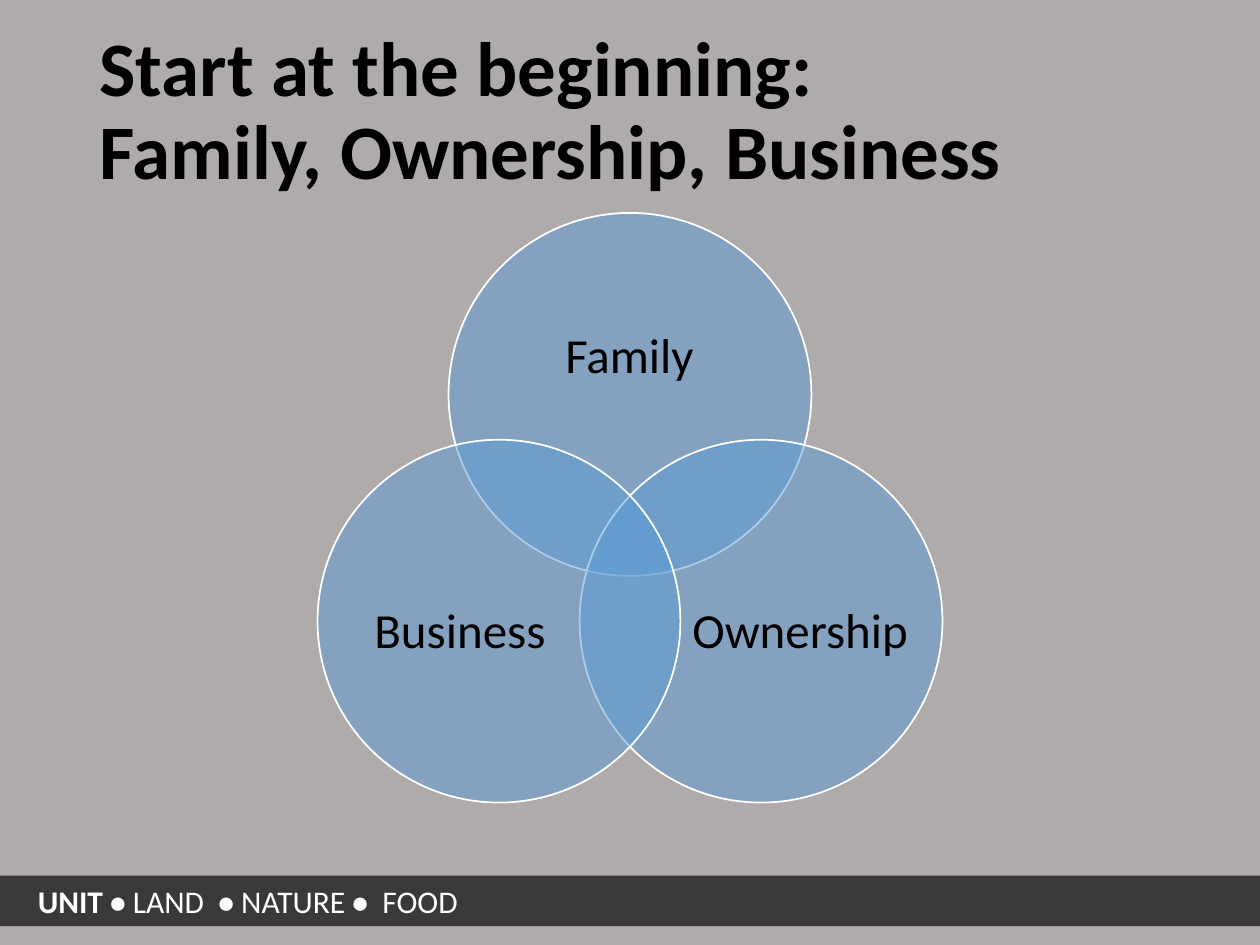
from dataclasses import dataclass

from lxml import etree
from pptx import Presentation
from pptx.dml.color import RGBColor
from pptx.enum.shapes import MSO_SHAPE
from pptx.enum.text import MSO_ANCHOR, MSO_AUTO_SIZE, PP_ALIGN
from pptx.oxml.ns import qn
from pptx.util import Inches, Pt

RECTANGLE, OVAL = MSO_SHAPE.RECTANGLE, MSO_SHAPE.OVAL
MIDDLE = MSO_ANCHOR.MIDDLE
LEFT, CENTER = PP_ALIGN.LEFT, PP_ALIGN.CENTER
NO_AUTOFIT = MSO_AUTO_SIZE.NONE
TITLE_ONLY = 5


@dataclass(frozen=True)
class Theme:
    font: str = "Calibri"
    background: RGBColor = RGBColor(0xAF, 0xAB, 0xAB)
    band: RGBColor = RGBColor(0x3B, 0x38, 0x38)
    circle: RGBColor = RGBColor(0x5B, 0x9B, 0xD5)
    light: RGBColor = RGBColor(0xFF, 0xFF, 0xFF)
    dark: RGBColor = RGBColor(0, 0, 0)
    circle_opacity: int = 50
    title_size: int = 44
    label_size: int = 28
    footer_size: int = 18


class SlideBuilder:
    def __init__(self, slide, theme):
        self.slide = slide
        self.theme = theme
        slide.background.fill.solid()
        slide.background.fill.fore_color.rgb = theme.background

    def style_frame(self, frame, margins):
        frame.word_wrap = True
        frame.auto_size = NO_AUTOFIT
        frame.vertical_anchor = MIDDLE
        (frame.margin_left, frame.margin_top,
         frame.margin_right, frame.margin_bottom) = map(Inches, margins)

    def style_paragraph(self, paragraph, size, color, align, bold=None):
        paragraph.alignment = align
        paragraph.font.name = self.theme.font
        paragraph.font.size = Pt(size)
        paragraph.font.color.rgb = color
        paragraph.font.bold = bold

    def title(self, text, box):
        title = self.slide.shapes.title
        title.left, title.top, title.width, title.height = map(Inches, box)
        self.style_frame(title.text_frame, (0.1, 0.05, 0.1, 0.05))
        paragraph = title.text_frame.paragraphs[0]
        paragraph.text = text
        paragraph.line_spacing = 0.9
        self.style_paragraph(paragraph, self.theme.title_size,
                             self.theme.dark, LEFT, bold=True)

    def footer(self, parts, box):
        band = self.slide.shapes.add_shape(RECTANGLE, *map(Inches, box))
        band.shadow.inherit = False
        band.fill.solid()
        band.fill.fore_color.rgb = self.theme.band
        band.line.fill.background()
        self.style_frame(band.text_frame, (0.3, 0.04, 0.07, 0.04))
        paragraph = band.text_frame.paragraphs[0]
        self.style_paragraph(paragraph, self.theme.footer_size,
                             self.theme.light, LEFT)
        for text, bold in parts:
            run = paragraph.add_run()
            run.text = text
            run.font.bold = bold

    def circle(self, group, center_x, center_y, diameter):
        radius = diameter / 2
        circle = group.shapes.add_shape(
            OVAL, Inches(center_x - radius), Inches(center_y - radius),
            Inches(diameter), Inches(diameter))
        circle.shadow.inherit = False
        circle.fill.solid()
        circle.fill.fore_color.rgb = self.theme.circle
        circle.line.color.rgb = self.theme.light
        circle.line.width = Pt(1)
        # Transparency of the fill
        color = circle.fill._xPr.find(qn("a:solidFill"))[0]
        etree.SubElement(color, qn("a:alpha"),
                         val=str(self.theme.circle_opacity * 1000))

    def label(self, group, text, box):
        label = group.shapes.add_textbox(*map(Inches, box))
        self.style_frame(label.text_frame, (0, 0, 0, 0))
        paragraph = label.text_frame.paragraphs[0]
        paragraph.text = text
        paragraph.line_spacing = 0.9
        self.style_paragraph(paragraph, self.theme.label_size,
                             self.theme.dark, CENTER)

    def venn(self, sets, diameter):
        group = self.slide.shapes.add_group_shape()
        for text, center, label_box in sets:
            self.circle(group, *center, diameter)
            self.label(group, text, label_box)


def main():
    presentation = Presentation()
    presentation.slide_width, presentation.slide_height = Inches(10), Inches(7.5)
    slide = presentation.slides.add_slide(presentation.slide_layouts[TITLE_ONLY])
    builder = SlideBuilder(slide, Theme())

    # Footer band
    builder.footer([("UNIT • ", True), ("LAND", False), ("  • ", True),
                    ("NATURE", False), (" •  ", True), ("FOOD", False)],
                   (0, 6.95, 10, 0.4))

    # Title
    builder.title("Start at the beginning: \vFamily, Ownership, Business",
                  (0.69, 0.4, 8.62, 1))

    # Three overlapping circles, symmetric about the slide's middle
    middle, upper, lower, offset = 5, 3.13, 4.93, 1.04
    label_width, label_height, label_offset = 1.73, 1.58, 1.35
    label_top = 4.23

    def lower_set(text, side):
        label_left = middle + side * label_offset - label_width / 2
        return (text, (middle + side * offset, lower),
                (label_left, label_top, label_width, label_height))

    builder.venn([("Family", (middle, upper), (3.94, 2.19, 2.11, 1.3)),
                  lower_set("Ownership", 1),
                  lower_set("Business", -1)], diameter=2.88)

    presentation.save("out.pptx")


if __name__ == "__main__":
    main()
